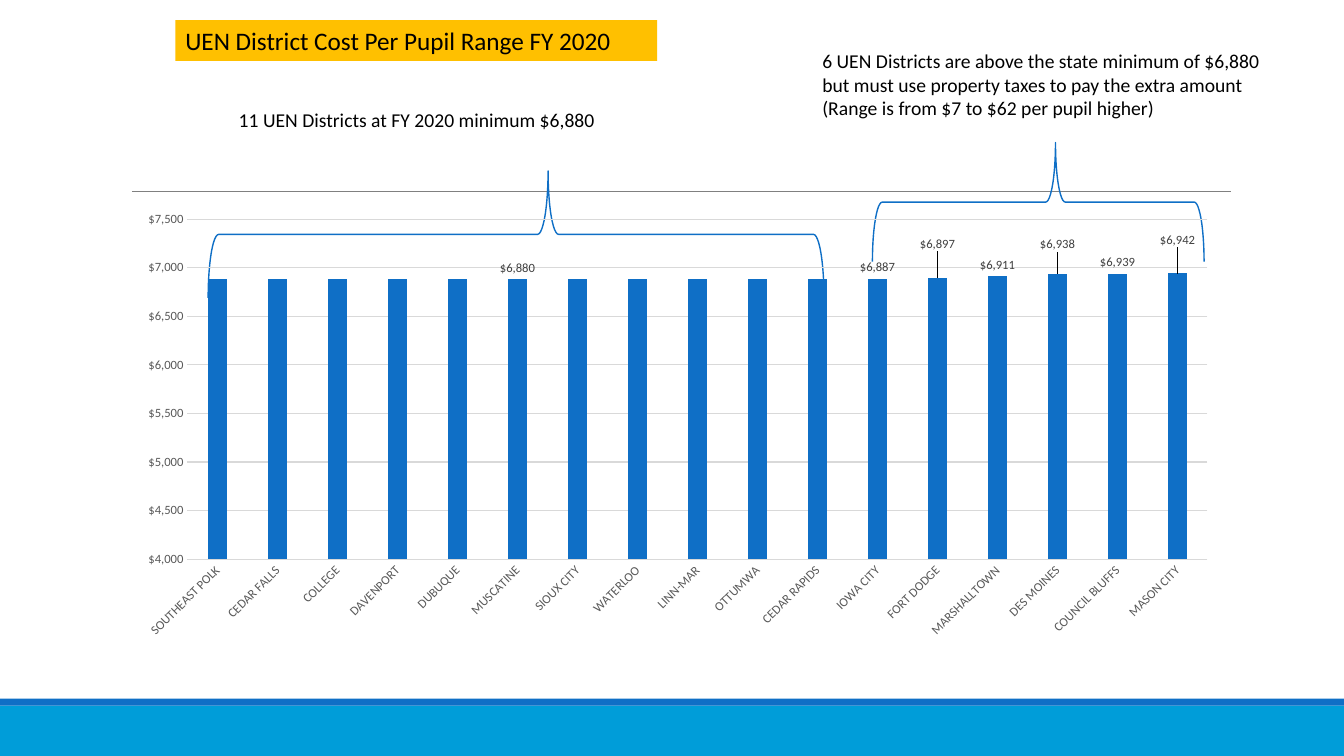
import pptx
import pptx.chart.data
import pptx.dml.color
import pptx.enum.chart
import pptx.enum.shapes
import pptx.enum.text
import pptx.oxml
import pptx.oxml.ns
import pptx.util
from dataclasses import dataclass
from typing import Optional

Pt = pptx.util.Pt
RGB = pptx.dml.color.RGBColor
Kind = pptx.enum.shapes.MSO_SHAPE
Enum = pptx.enum.chart

BLUE = RGB(0x0F, 0x6F, 0xC6)
CYAN = RGB(0x00, 0x9D, 0xD9)
GOLD = RGB(0xFF, 0xC0, 0x00)
BLACK = RGB(0, 0, 0)
RULE = RGB(0x80, 0x80, 0x80)
GRID = RGB(0xD9, 0xD9, 0xD9)
AXIS = RGB(0x59, 0x59, 0x59)
LABEL = RGB(0x40, 0x40, 0x40)
FONT = "Calibri"
MONEY = '"$"#,##0'
MINIMUM = 6880


@dataclass
class Box:
    left: float
    top: float
    width: float
    height: float
    fill: Optional[RGB] = None
    text: str = ""
    size: float = 14

    def frame(self):
        return [Pt(v) for v in (self.left, self.top, self.width, self.height)]


@dataclass
class Bar:
    name: str
    cost: int = MINIMUM
    label: bool = False
    lift: float = 0  # share of chart height the label moves up


BANDS = [Box(0, 504, 960, 36, CYAN), Box(0, 499, 960, 5, BLUE)]
BRACES = [Box(323.28, -52.56, 90.72, 439.92), Box(699.12, 25.92, 84.96, 236.88)]
NOTES = [
    Box(163.44, 73.44, 288, 24.24, text="11 UEN Districts at FY 2020 minimum $6,880"),
    Box(580.32, 31.68, 338.4, 58.2,
        text="6 UEN Districts are above the state minimum of $6,880 but must use "
             "property taxes to pay the extra amount (Range is from $7 to $62 per pupil higher)"),
]
TITLE = Box(125.28, 14.4, 344.16, 29.08, GOLD, "UEN District Cost Per Pupil Range FY 2020", 18)
CHART = Box(86.4, 145.44, 792, 316.8)
BARS = [
    Bar("SOUTHEAST POLK"), Bar("CEDAR FALLS"), Bar("COLLEGE"), Bar("DAVENPORT"),
    Bar("DUBUQUE"), Bar("MUSCATINE", label=True), Bar("SIOUX CITY"), Bar("WATERLOO"),
    Bar("LINN-MAR"), Bar("OTTUMWA"), Bar("CEDAR RAPIDS"),
    Bar("IOWA CITY", 6887, True), Bar("FORT DODGE", 6897, True, 0.05),
    Bar("MARSHALLTOWN", 6911, True), Bar("DES MOINES", 6938, True, 0.04),
    Bar("COUNCIL BLUFFS", 6939, True), Bar("MASON CITY", 6942, True, 0.05),
]


def style(font, size: float, color: RGB) -> None:
    font.name, font.size = FONT, Pt(size)
    font.color.rgb = color


def write(shape, box: Box) -> None:
    frame = shape.text_frame
    frame.word_wrap = True
    frame.auto_size = pptx.enum.text.MSO_AUTO_SIZE.SHAPE_TO_FIT_TEXT
    para = frame.paragraphs[0]
    para.text = box.text
    para.alignment = pptx.enum.text.PP_ALIGN.LEFT
    style(para.font, box.size, BLACK)


def draw_rect(slide, box: Box) -> None:
    shape = slide.shapes.add_shape(Kind.RECTANGLE, *box.frame())
    shape.shadow.inherit = False
    shape.fill.solid()
    shape.fill.fore_color.rgb = box.fill
    shape.line.fill.background()
    if box.text:
        write(shape, box)


def draw_brace(slide, box: Box) -> None:
    brace = slide.shapes.add_shape(Kind.RIGHT_BRACE, *box.frame())
    brace.shadow.inherit = False
    brace.rotation = 270
    brace.adjustments[0], brace.adjustments[1] = 0.083, 0.552
    brace.fill.background()
    brace.line.color.rgb, brace.line.width = BLUE, Pt(1)


def draw_rule(slide) -> None:
    rule = slide.shapes.add_connector(
        pptx.enum.shapes.MSO_CONNECTOR.STRAIGHT, Pt(94.3), Pt(136.8), Pt(879), Pt(136.8))
    rule.line.color.rgb, rule.line.width = RULE, Pt(0.5)
    rule._element.spPr.append(pptx.oxml.parse_xml(
        f'<a:effectLst {pptx.oxml.ns.nsdecls("a")}/>'))


def layout(body: str):
    return pptx.oxml.parse_xml(
        f'<c:layout {pptx.oxml.ns.nsdecls("c")}><c:manualLayout>{body}'
        '</c:manualLayout></c:layout>')


def draw_labels(series) -> None:
    series.data_labels.show_value = False
    for point, bar in enumerate(BARS):
        if not bar.label:
            continue
        label = series.points[point].data_label
        style(label.font, 9, LABEL)
        label.position = Enum.XL_LABEL_POSITION.OUTSIDE_END
        if bar.lift:
            node = series.data_labels._element.xpath(f'c:dLbl[c:idx/@val="{point}"]')[0]
            node.insert(1, layout(f'<c:x val="0"/><c:y val="{-bar.lift}"/>'))
    # Leader lines for the raised labels
    series.data_labels._element.append(pptx.oxml.parse_xml(
        f'<c:extLst {pptx.oxml.ns.nsdecls("c")}>'
        '<c:ext uri="{CE6537A1-D6FC-4f65-9D91-7224C49458BB}" '
        'xmlns:c15="http://schemas.microsoft.com/office/drawing/2012/chart">'
        '<c15:showLeaderLines val="1"/></c:ext></c:extLst>'))


def draw_chart(slide) -> None:
    data = pptx.chart.data.CategoryChartData(number_format=MONEY)
    data.categories = [bar.name for bar in BARS]
    data.add_series("Series 1", [bar.cost for bar in BARS])
    chart = slide.shapes.add_chart(
        Enum.XL_CHART_TYPE.COLUMN_CLUSTERED, *CHART.frame(), data).chart
    chart.has_legend = chart.has_title = False
    style(chart.font, 10, BLACK)

    # Columns
    plot = chart.plots[0]
    plot.gap_width, plot.overlap, plot.vary_by_categories = 219, -27, False
    series = plot.series[0]
    series.format.fill.solid()
    series.format.fill.fore_color.rgb = BLUE
    draw_labels(series)

    # Axes
    cat, val = chart.category_axis, chart.value_axis
    for axis in (cat, val):
        axis.major_tick_mark = axis.minor_tick_mark = Enum.XL_TICK_MARK.NONE
        style(axis.tick_labels.font, 9, AXIS)
    cat.tick_labels.font._element.getparent().getparent().getparent().find(
        pptx.oxml.ns.qn("a:bodyPr")).set("rot", "-2700000")
    val.minimum_scale, val.maximum_scale, val.major_unit = 4000, 7500, 500
    val.tick_labels.number_format = MONEY
    val.tick_labels.number_format_is_linked = False
    val.format.line.fill.background()
    val.has_major_gridlines = True
    for line in (cat.format.line, val.major_gridlines.format.line):
        line.color.rgb, line.width = GRID, Pt(0.75)

    # Plot area
    area = chart._chartSpace.chart.plotArea
    for old in area.xpath("c:layout"):
        area.remove(old)
    area.insert(0, layout(
        '<c:layoutTarget val="inner"/><c:xMode val="edge"/><c:yMode val="edge"/>'
        '<c:x val="0.06"/><c:y val="0.035"/><c:w val="0.92"/><c:h val="0.767"/>'))


def main() -> None:
    deck = pptx.Presentation()
    deck.slide_width, deck.slide_height = Pt(960), Pt(540)
    slide = deck.slides.add_slide(deck.slide_layouts[6])
    for band in BANDS:
        draw_rect(slide, band)
    draw_rule(slide)
    for brace, note in zip(BRACES, NOTES):
        draw_brace(slide, brace)
        write(slide.shapes.add_textbox(*note.frame()), note)
    draw_chart(slide)
    draw_rect(slide, TITLE)
    deck.save("out.pptx")


if __name__ == "__main__":
    main()
